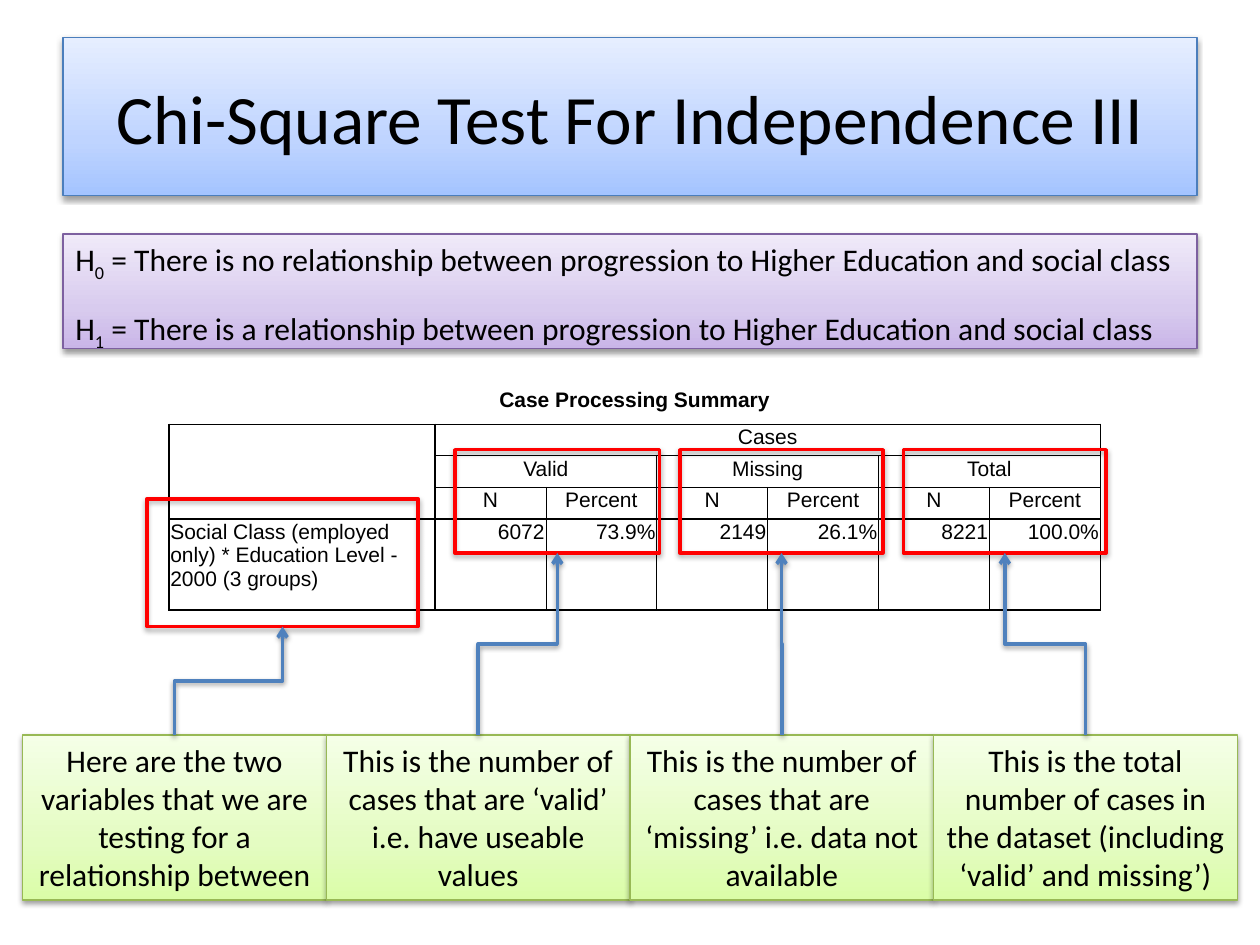
"""Builds a slide that explains the case summary of a chi-square test."""
from copy import deepcopy

from lxml import etree
from pptx import Presentation
from pptx import util as u
from pptx.dml.color import RGBColor
from pptx.enum import shapes, text
from pptx.oxml import ns

BLACK = RGBColor(0, 0, 0)
RED = RGBColor(0xFF, 0, 0)
ARROW_BLUE = RGBColor(0x4F, 0x81, 0xBD)
BLUE_LINE = RGBColor(0x4B, 0x7E, 0xBC)
GREEN_LINE = RGBColor(0x98, 0xB9, 0x55)
PURPLE_LINE = RGBColor(0x7D, 0x60, 0xA0)
BLUES = (RGBColor(0xA4, 0xC4, 0xFF), RGBColor(0xBF, 0xD4, 0xFF), RGBColor(0xE6, 0xEE, 0xFF))
GREENS = (RGBColor(0xDA, 0xFD, 0xA7), RGBColor(0xE4, 0xFC, 0xC2), RGBColor(0xF5, 0xFF, 0xE7))
PURPLES = (RGBColor(0xC9, 0xB5, 0xE8), RGBColor(0xD8, 0xCB, 0xEE), RGBColor(0xF0, 0xEA, 0xF9))
STOPS = (0, 0.35, 1)

LEFT, CENTER, RIGHT = text.PP_ALIGN.LEFT, text.PP_ALIGN.CENTER, text.PP_ALIGN.RIGHT

HYPOTHESES = (
    ("0", " = There is no relationship between progression to Higher Education and social class"),
    ("1", " = There is a relationship between progression to Higher Education and social class"),
)
SUMMARY = (
    ("Case Processing Summary", "", "", "", "", "", ""),
    ("", "Cases", "", "", "", "", ""),
    ("", "Valid", "", "Missing", "", "Total", ""),
    ("", "N", "Percent", "N", "Percent", "N", "Percent"),
    ("Social Class (employed only) * Education Level - 2000 (3 groups)",
     "6072", "73.9%", "2149", "26.1%", "8221", "100.0%"),
)
MERGES = ((0, 0, 0, 6), (1, 0, 3, 0), (1, 1, 1, 6), (2, 1, 2, 2), (2, 3, 2, 4), (2, 5, 2, 6))
COLUMN_WIDTHS = (152,) + (63.36,) * 6
ROW_HEIGHTS = (21.5, 18, 18, 18, 52)
HEAVY_COLUMNS, HEAVY_ROWS = (0, 1, 7), (1, 4, 5)

HIGHLIGHTS = (
    (84, 285, 155, 73),
    (260, 257, 117, 59),
    (388.6, 257, 116, 59),
    (516.2, 257, 116, 59),
)
CALLOUTS = (
    "Here are the two variables that we are testing for a relationship between",
    "This is the number of cases that are ‘valid’ i.e. have useable values",
    "This is the number of cases that are ‘missing’ i.e. data not available",
    "This is the total number of cases in the dataset (including ‘valid’ and missing’)",
)
CALLOUT_LEFT, CALLOUT_TOP, CALLOUT_WIDTH, CALLOUT_HEIGHT = 13, 420, 173.5, 94.3


def add_child(parent, tag, **attributes):
    """Append a drawing element with the given attributes."""
    return etree.SubElement(parent, ns.qn(tag), {k: str(v) for k, v in attributes.items()})


def add_shadow(item, opacity=38):
    """Give a finished shape or connector a soft shadow below it."""
    effects = add_child(item._element.spPr, "a:effectLst")
    shadow = add_child(effects, "a:outerShdw", blurRad=u.Pt(3.1), dist=u.Pt(1.6),
                       dir=5400000, rotWithShape=0)
    add_child(add_child(shadow, "a:srgbClr", val=BLACK), "a:alpha", val=opacity * 1000)


def style_font(font, size, name="Calibri"):
    """Set size, typeface and black colour."""
    font.size, font.name = u.Pt(size), name
    font.color.rgb = BLACK


def add_gradient_box(page, bounds, colours, outline):
    """Add a shadowed rectangle with a gradient that rises from the bottom."""
    box = page.shapes.add_shape(shapes.MSO_SHAPE.RECTANGLE, *map(u.Pt, bounds))
    box.fill.gradient()
    box.fill.gradient_angle = 90
    stop_list = box._element.spPr.find(".//" + ns.qn("a:gsLst"))
    stop_list.insert(1, deepcopy(stop_list[0]))
    for stop, colour, position in zip(box.fill.gradient_stops, colours, STOPS):
        stop.color.rgb, stop.position = colour, position
    box.line.color.rgb, box.line.width = outline, u.Pt(0.75)
    add_shadow(box)
    box.text_frame.word_wrap = True
    box.text_frame.vertical_anchor = text.MSO_ANCHOR.TOP
    return box


def add_caption_box(page, bounds, colours, outline, caption, size):
    """Add a gradient box with one centred paragraph."""
    box = add_gradient_box(page, bounds, colours, outline)
    box.text_frame.text = caption
    para = box.text_frame.paragraphs[0]
    para.alignment = CENTER
    style_font(para.runs[0].font, size)
    return box


def add_hypotheses(page):
    """Add the box with the null and the alternative hypothesis."""
    box = add_gradient_box(page, (36, 133.7, 648, 65.6), PURPLES, PURPLE_LINE)
    frame = box.text_frame
    for index, (number, statement) in enumerate(HYPOTHESES):
        para = frame.add_paragraph() if index else frame.paragraphs[0]
        para.alignment = LEFT
        para.space_before = u.Pt(14.6 * index)
        for wording in ("H", number, statement):
            span = para.add_run()
            span.text = wording
            style_font(span.font, 18)
        para.runs[1].font._element.set("baseline", "-25000")


def add_border(cell, side, heavy):
    """Draw one black edge of a table cell."""
    edge = add_child(cell._tc.get_or_add_tcPr(), "a:ln" + side, w=u.Pt(1 if heavy else 0.5))
    add_child(add_child(edge, "a:solidFill"), "a:srgbClr", val=BLACK)


def style_cell(cell, row, column):
    """Format one summary cell by its place in the grid."""
    cell.margin_left = cell.margin_right = cell.margin_top = u.Pt(0.75)
    cell.margin_bottom = 0
    para = cell.text_frame.paragraphs[0]
    style_font(para.font, 12, "Arial")
    for span in para.runs:
        style_font(span.font, 12, "Arial")
        span.font.bold = row == 0
    if row < 4:
        para.alignment = CENTER
    else:
        para.alignment = RIGHT if column else LEFT
    if row and not cell.is_spanned:
        add_border(cell, "L", column in HEAVY_COLUMNS)
        add_border(cell, "R", column + cell.span_width in HEAVY_COLUMNS)
        add_border(cell, "T", row in HEAVY_ROWS)
        add_border(cell, "B", row + cell.span_height in HEAVY_ROWS)
    cell.fill.background()


def add_summary(page):
    """Add the case processing table."""
    bounds = (96.6, 221, sum(COLUMN_WIDTHS), sum(ROW_HEIGHTS))
    table = page.shapes.add_table(len(SUMMARY), len(COLUMN_WIDTHS), *map(u.Pt, bounds)).table
    table.first_row = table.horz_banding = False
    for column, width in zip(table.columns, COLUMN_WIDTHS):
        column.width = u.Pt(width)
    for row, height in zip(table.rows, ROW_HEIGHTS):
        row.height = u.Pt(height)
    for top, left, bottom, right in MERGES:
        table.cell(top, left).merge(table.cell(bottom, right))
    for row, wordings in enumerate(SUMMARY):
        for column, wording in enumerate(wordings):
            cell = table.cell(row, column)
            if wording:
                cell.text_frame.text = wording
            style_cell(cell, row, column)


def add_highlight(page, bounds):
    """Add a red frame around a part of the table."""
    frame = page.shapes.add_shape(shapes.MSO_SHAPE.RECTANGLE, *map(u.Pt, bounds))
    frame.fill.background()
    frame.line.color.rgb, frame.line.width = RED, u.Pt(2)
    add_shadow(frame, 35)


def add_rising_arrow(page, start_x, start_y, end_x, end_y):
    """Add an elbow arrow that leaves upwards, as a level elbow turned by 270 degrees."""
    middle_x, middle_y = (start_x + end_x) / 2, (start_y + end_y) / 2
    half_rise, half_run = (start_y - end_y) / 2, (end_x - start_x) / 2
    ends = (middle_x - half_rise, middle_y - half_run, middle_x + half_rise, middle_y + half_run)
    arrow = page.shapes.add_connector(shapes.MSO_CONNECTOR.ELBOW, *map(u.Pt, ends))
    arrow._element.spPr.find(ns.qn("a:xfrm")).set("rot", str(270 * 60000))
    arrow.line.color.rgb, arrow.line.width = ARROW_BLUE, u.Pt(2)
    add_child(arrow.line._get_or_add_ln(), "a:tailEnd", type="arrow")
    add_shadow(arrow)


def main():
    """Build and save the deck."""
    deck = Presentation()
    deck.slide_width, deck.slide_height = u.Pt(720), u.Pt(540)
    page = deck.slides.add_slide(deck.slide_layouts[6])
    title = add_caption_box(page, (36, 21.6, 648, 90), BLUES, BLUE_LINE,
                            "Chi-Square Test For Independence III", 39.6)
    title.text_frame.vertical_anchor = text.MSO_ANCHOR.MIDDLE
    add_summary(page)
    for bounds in HIGHLIGHTS:
        add_highlight(page, bounds)
    lefts = [CALLOUT_LEFT + CALLOUT_WIDTH * index for index in range(len(CALLOUTS))]
    for left, caption in zip(lefts, CALLOUTS):
        add_caption_box(page, (left, CALLOUT_TOP, CALLOUT_WIDTH, CALLOUT_HEIGHT),
                        GREENS, GREEN_LINE, caption, 18)
    for callout_left, (left, top, width, height) in zip(lefts, HIGHLIGHTS):
        add_rising_arrow(page, callout_left + CALLOUT_WIDTH / 2, CALLOUT_TOP,
                         left + width / 2, top + height)
    add_hypotheses(page)
    deck.save("out.pptx")


if __name__ == "__main__":
    main()
